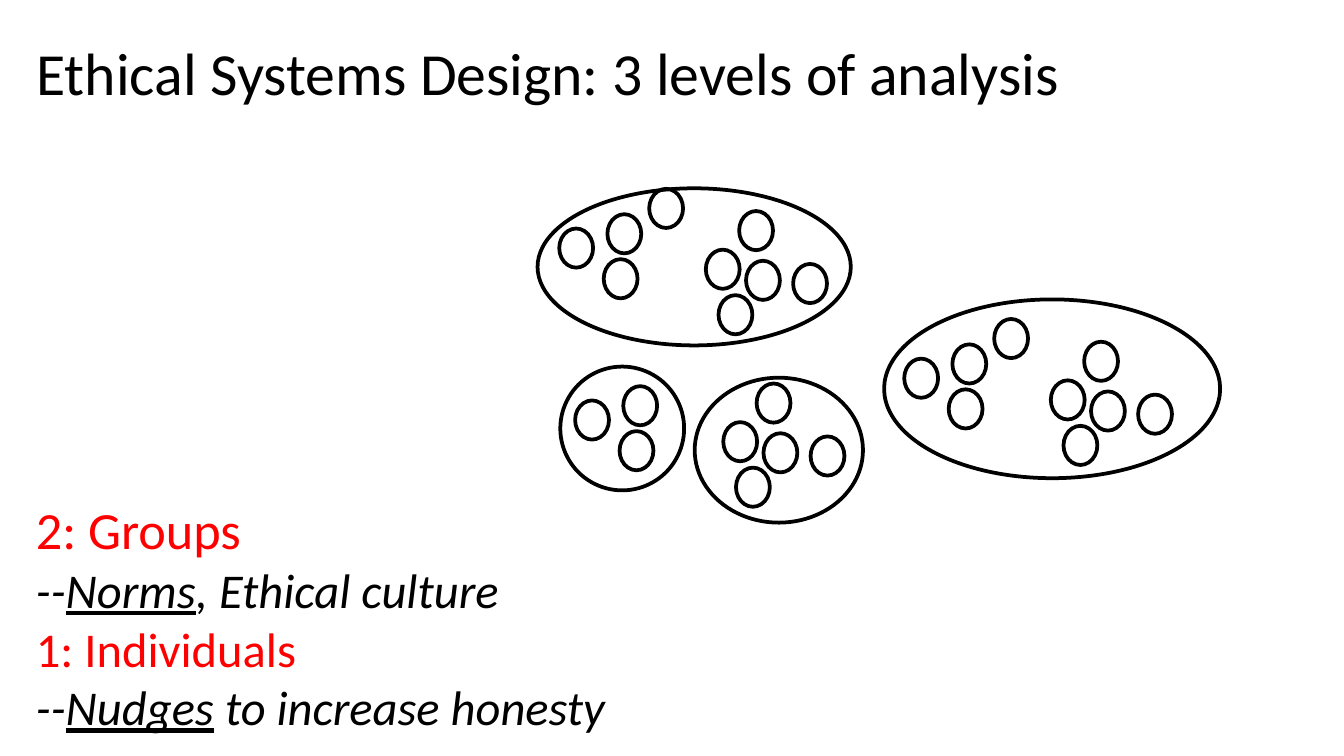
import pptx
import pptx.util
import pptx.dml.color
import pptx.enum.shapes
import pptx.enum.text
from pptx.util import Cm

# Circle positions in cm, relative to the first circle of each cluster
FOUR = [(0, 0), (0.91, -0.27), (0.84, 0.58), (1.7, -0.75)]
THREE = FOUR[:3]
FIVE = [(0, 0), (0.24, 0.86), (1.65, 0.27), (0.76, 0.21), (0.63, -0.73)]


def color(value):
    return pptx.dml.color.RGBColor.from_string(value)


def add_run(p, text, size=26, fill="000000", italic=False, underline=False):
    r = p.add_run()
    r.text = text
    r.font.name = "Calibri"
    r.font.size = pptx.util.Pt(size)
    r.font.color.rgb = color(fill)
    r.font.italic = italic
    r.font.underline = underline
    return r


class Deck:
    LINE, ACCENT = "000000", "FF0000"
    PERSON = (0.64, 0.74)

    def __init__(self):
        self.prs = pptx.Presentation()
        self.prs.slide_width, self.prs.slide_height = Cm(25.4), Cm(14.29)
        self.s = self.prs.slides.add_slide(self.prs.slide_layouts[5])

    def title(self, text, x, y, w, h):
        sp = self.s.shapes.title
        sp.left, sp.top, sp.width, sp.height = Cm(x), Cm(y), Cm(w), Cm(h)
        tf = sp.text_frame
        tf.auto_size = pptx.enum.text.MSO_AUTO_SIZE.NONE
        tf.vertical_anchor = pptx.enum.text.MSO_ANCHOR.MIDDLE
        p = tf.paragraphs[0]
        p.alignment = pptx.enum.text.PP_ALIGN.LEFT
        add_run(p, text, size=32)

    def ellipse(self, x, y, w, h):
        sp = self.s.shapes.add_shape(
            pptx.enum.shapes.MSO_SHAPE.OVAL, Cm(x), Cm(y), Cm(w), Cm(h))
        sp.shadow.inherit = False
        sp.fill.background()
        sp.line.color.rgb = color(self.LINE)
        sp.line.width = pptx.util.Pt(2)

    def cluster(self, x, y, offsets):
        for dx, dy in offsets:
            self.ellipse(x + dx, y + dy, *self.PERSON)

    def level(self, x, y, w, h, heading, size, key, rest):
        tf = self.s.shapes.add_textbox(Cm(x), Cm(y), Cm(w), Cm(h)).text_frame
        tf.word_wrap = True
        tf.auto_size = pptx.enum.text.MSO_AUTO_SIZE.SHAPE_TO_FIT_TEXT
        add_run(tf.paragraphs[0], heading, size=size, fill=self.ACCENT)
        p = tf.add_paragraph()
        add_run(p, "--", italic=True)
        add_run(p, key, italic=True, underline=True)
        add_run(p, rest, italic=True)


def main():
    deck = Deck()
    deck.title("Ethical Systems Design: 3 levels of analysis",
               0.43, 0.15, 22.86, 2.39)

    # Individuals
    for x, y, offsets in [(10.57, 4.32, FOUR), (13.34, 4.72, FIVE),
                          (10.87, 7.57, THREE), (13.67, 7.98, FIVE),
                          (17.09, 6.78, FOUR), (19.86, 7.19, FIVE)]:
        deck.cluster(x, y, offsets)

    # Groups around the individuals
    for group in [(16.71, 5.66, 6.35, 3.38), (10.16, 3.56, 5.92, 2.97),
                  (10.59, 6.93, 2.34, 2.34), (13.13, 7.14, 3.18, 2.74)]:
        deck.ellipse(*group)

    # Level descriptions
    deck.level(0.43, 11.58, 12.9, 2.49,
               "1: Individuals", 26, "Nudges", " to increase honesty")
    deck.level(0.43, 9.27, 12.9, 2.64,
               "2: Groups", 28, "Norms", ", Ethical culture")

    deck.prs.save("out.pptx")


if __name__ == "__main__":
    main()
